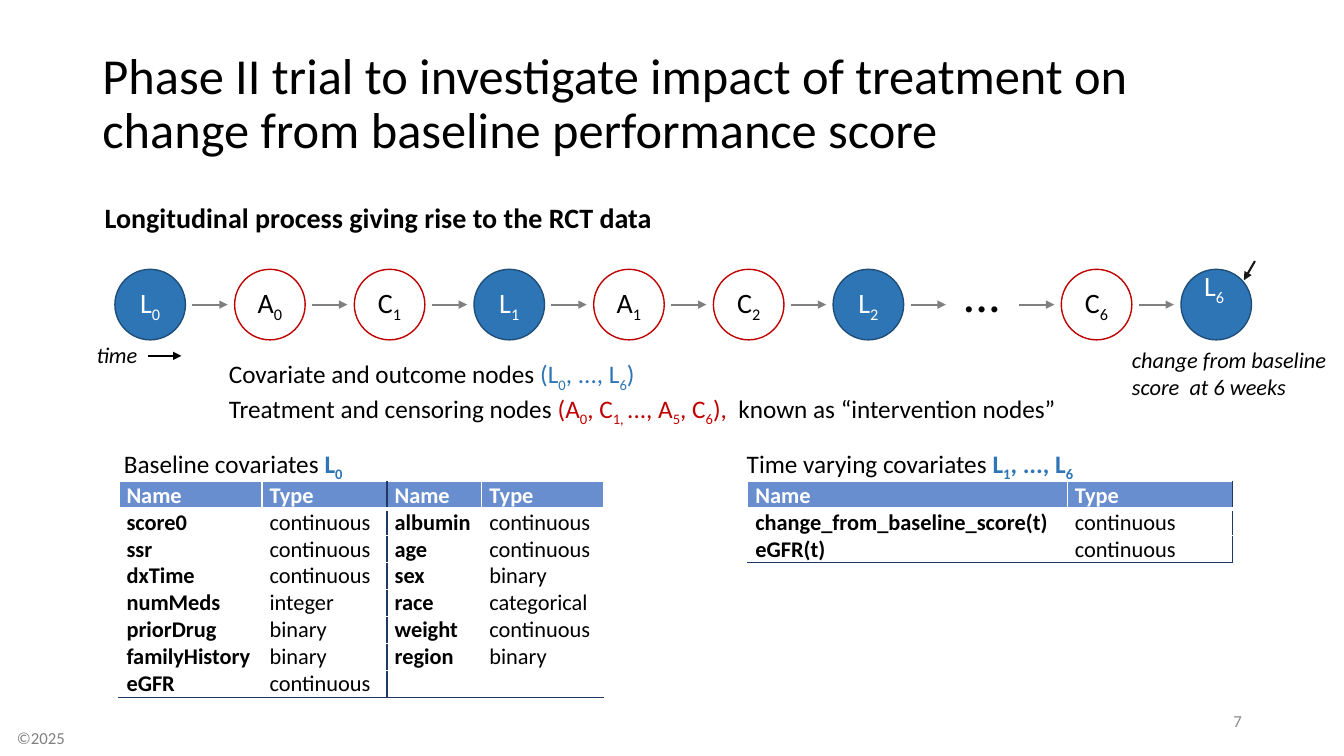
from lxml import etree
from pptx import Presentation
from pptx.dml.color import RGBColor
from pptx.enum import shapes, text
from pptx.oxml import ns
from pptx.util import Pt

BLACK = RGBColor(0, 0, 0)
WHITE = RGBColor(255, 255, 255)
BLUE = RGBColor(0x2E, 0x75, 0xB6)
DEEP = RGBColor(0x1F, 0x4E, 0x79)
RED = RGBColor(0xC0, 0, 0)
GREY = RGBColor(0x80, 0x80, 0x80)
PALE = RGBColor(0x8C, 0x8C, 0x8C)
INK = RGBColor(0x18, 0x17, 0x17)
NAVY = RGBColor(0x20, 0x38, 0x64)
HEAD = RGBColor(0x44, 0x72, 0xC4)


def write(par, parts, size, italic=False):
    """Add (text, colour, bold) parts; what stands between bars is subscript."""
    for words, color, bold in parts:
        for n, piece in enumerate(words.split("|")):
            if not piece:
                continue
            run = par.add_run()
            run.text = piece
            font = run.font
            font.name, font.size = "Calibri", Pt(size)
            font.bold, font.italic = bold, italic
            font.color.rgb = color
            if n % 2:
                run._r.get_or_add_rPr().set("baseline", "-25000")


def arrow(x1, y1, x2, y2, color, width):
    line = slide.shapes.add_connector(
        shapes.MSO_CONNECTOR.STRAIGHT, Pt(x1), Pt(y1), Pt(x2), Pt(y2))
    line.line.color.rgb = color
    line.line.width = Pt(width)
    etree.SubElement(line.line._get_or_add_ln(), ns.qn("a:tailEnd"), type="triangle")
    etree.SubElement(line._element.spPr, ns.qn("a:effectLst"))


prs = Presentation()
prs.slide_width, prs.slide_height = Pt(960), Pt(540)
slide = prs.slides.add_slide(prs.slide_layouts[5])

# Title
title = slide.shapes.title
title.left, title.top, title.width, title.height = Pt(66), Pt(23), Pt(828), Pt(104.4)
frame = title.text_frame
frame.auto_size = text.MSO_AUTO_SIZE.NONE
frame.vertical_anchor = text.MSO_ANCHOR.MIDDLE
par = frame.paragraphs[0]
par.alignment, par.line_spacing = text.PP_ALIGN.LEFT, 0.9
write(par, [("Phase II trial to investigate impact of treatment on "
             "change from baseline performance score", BLACK, False)], 36)

# Text boxes: place, size, wrap, middle anchor, italic, paragraphs
boxes = [
    ((5, 516.2, 50, 21.8), 12, False, False, False, [[("©2025", GREY, False)]]),
    ((67.7, 104.4, 828, 104.4), 20, True, True, False,
     [[("Longitudinal process giving rise to the RCT data", BLACK, True)]]),
    ((678.2, 500.4, 216, 28.8), 12, True, True, False, [[("7", PALE, False)]]),
    ((156.4, 252.7, 618.5, 51), 18, False, False, False, [
        [("Covariate and outcome nodes", BLACK, False),
         (" (L|0|, ..., L|6|)", BLUE, False)],
        [("Treatment and censoring nodes ", BLACK, False),
         ("(A|0|, C|1, |..., A|5|, C|6|), ", RED, False),
         (" known as “intervention nodes”", BLACK, False)]]),
    ((61.9, 240.5, 44, 26.6), 16, False, False, True, [[("time", BLACK, False)]]),
    ((81.4, 316.8, 173.5, 29), 18, False, False, False,
     [[("Baseline covariates ", BLACK, False), ("L|0|", BLUE, True)]]),
    ((526.3, 316.8, 255.6, 29), 18, False, False, False,
     [[("Time varying covariates ", BLACK, False), ("L|1|, ..., L|6|", BLUE, True)]]),
    ((801.4, 244, 158.4, 46), 16, True, False, True,
     [[("change from baseline score  at 6 weeks", BLACK, False)]]),
]
for place, size, wrap, middle, italic, pars in boxes:
    box = slide.shapes.add_textbox(*map(Pt, place))
    frame = box.text_frame
    frame.word_wrap = wrap
    if middle:
        frame.vertical_anchor = text.MSO_ANCHOR.MIDDLE
    else:
        frame.auto_size = text.MSO_AUTO_SIZE.SHAPE_TO_FIT_TEXT
    for n, parts in enumerate(pars):
        par = frame.add_paragraph() if n else frame.paragraphs[0]
        write(par, parts, size, italic)
        if size == 20:
            par.line_spacing = 0.9
        if parts[0][0] == "7":
            par.alignment = text.PP_ALIGN.RIGHT

# Chain of nodes
LEFT, STEP, SIZE, MID = 82.1, 85.5, 50.4, 217.6
names = ["L|0|", "A|0|", "C|1|", "L|1|", "A|1|", "C|2|", "L|2|", "...", "C|6|", "L|6|"]
for n, name in enumerate(names):
    x = LEFT + STEP * n - (8 if n > 7 else 0)
    if n:
        arrow(x - 30.2, MID, x - 5, MID, GREY, 1.5)
    if name == "...":
        dots = slide.shapes.add_textbox(Pt(x), Pt(183.6), Pt(42.5), Pt(51))
        dots.text_frame.word_wrap = False
        write(dots.text_frame.paragraphs[0], [(name, BLACK, False)], 36)
        continue
    node = slide.shapes.add_shape(
        shapes.MSO_SHAPE.OVAL, Pt(x), Pt(MID - SIZE / 2), Pt(SIZE), Pt(SIZE))
    node.shadow.inherit = False
    node.line.width = Pt(1)
    state = name[0] == "L"
    if state:
        node.fill.solid()
        node.fill.fore_color.rgb = BLUE
    else:
        node.fill.background()
    node.line.color.rgb = DEEP if state else RED
    frame = node.text_frame
    frame.vertical_anchor = text.MSO_ANCHOR.MIDDLE
    if name == "L|6|":
        frame.margin_top, frame.margin_bottom, frame.margin_right = 0, Pt(24), Pt(10)
    par = frame.paragraphs[0]
    par.alignment = text.PP_ALIGN.CENTER
    write(par, [(name, WHITE if state else BLACK, False)], 20)

arrow(105.8, 254.2, 129.6, 254.2, BLACK, 1)
arrow(896.4, 186.5, 888.5, 200.2, INK, 1.5)

# Tables: left, column widths, columns with a dark left and right side, rows
ROW = 19.2
tables = [
    (85, [102.2, 89.3, 67.7, 87.1], [2], [1], [
        ("Name", "Type", "Name", "Type"),
        ("score0", "continuous", "albumin", "continuous"),
        ("ssr", "continuous", "age", "continuous"),
        ("dxTime", "continuous", "sex", "binary"),
        ("numMeds", "integer", "race", "categorical"),
        ("priorDrug", "binary", "weight", "continuous"),
        ("familyHistory", "binary", "region", "binary"),
        ("eGFR", "continuous", "", "")]),
    (534.2, [228.2, 118.1], [], [1], [
        ("Name", "Type"),
        ("change_from_baseline_score(t)", "continuous"),
        ("eGFR(t)", "continuous")]),
]
for left, cols, darkl, darkr, rows in tables:
    grid = slide.shapes.add_table(len(rows), len(cols), Pt(left), Pt(344.2),
                                  Pt(sum(cols)), Pt(ROW * len(rows))).table
    grid.horz_banding = False
    for c, width in enumerate(cols):
        grid.columns[c].width = Pt(width)
    for r, row in enumerate(rows):
        grid.rows[r].height = Pt(ROW)
        for c, word in enumerate(row):
            cell = grid.cell(r, c)
            cell.margin_left = cell.margin_right = Pt(5.4)
            cell.margin_top = cell.margin_bottom = 0
            par = cell.text_frame.paragraphs[0]
            write(par, [(word, BLACK if r else WHITE, r == 0 or c % 2 == 0)], 16)
            par._p.get_or_add_endParaRPr().set("sz", "1600")
            # Borders
            props = cell._tc.get_or_add_tcPr()
            dark = {"L": c in darkl, "R": c in darkr, "T": False, "B": r == len(rows) - 1}
            for side, deep in dark.items():
                width = 3 if r == 0 and side == "B" else 1
                edge = etree.SubElement(props, ns.qn("a:ln" + side), w=str(Pt(width)))
                fill = etree.SubElement(edge, ns.qn("a:solidFill"))
                etree.SubElement(fill, ns.qn("a:srgbClr"), val=str(NAVY if deep else WHITE))
            # Fill
            if r:
                cell.fill.background()
            else:
                cell.fill.solid()
                cell.fill.fore_color.rgb = HEAD
                tint = props.find(ns.qn("a:solidFill")).find(ns.qn("a:srgbClr"))
                etree.SubElement(tint, ns.qn("a:alpha"), val="80000")

prs.save("out.pptx")
